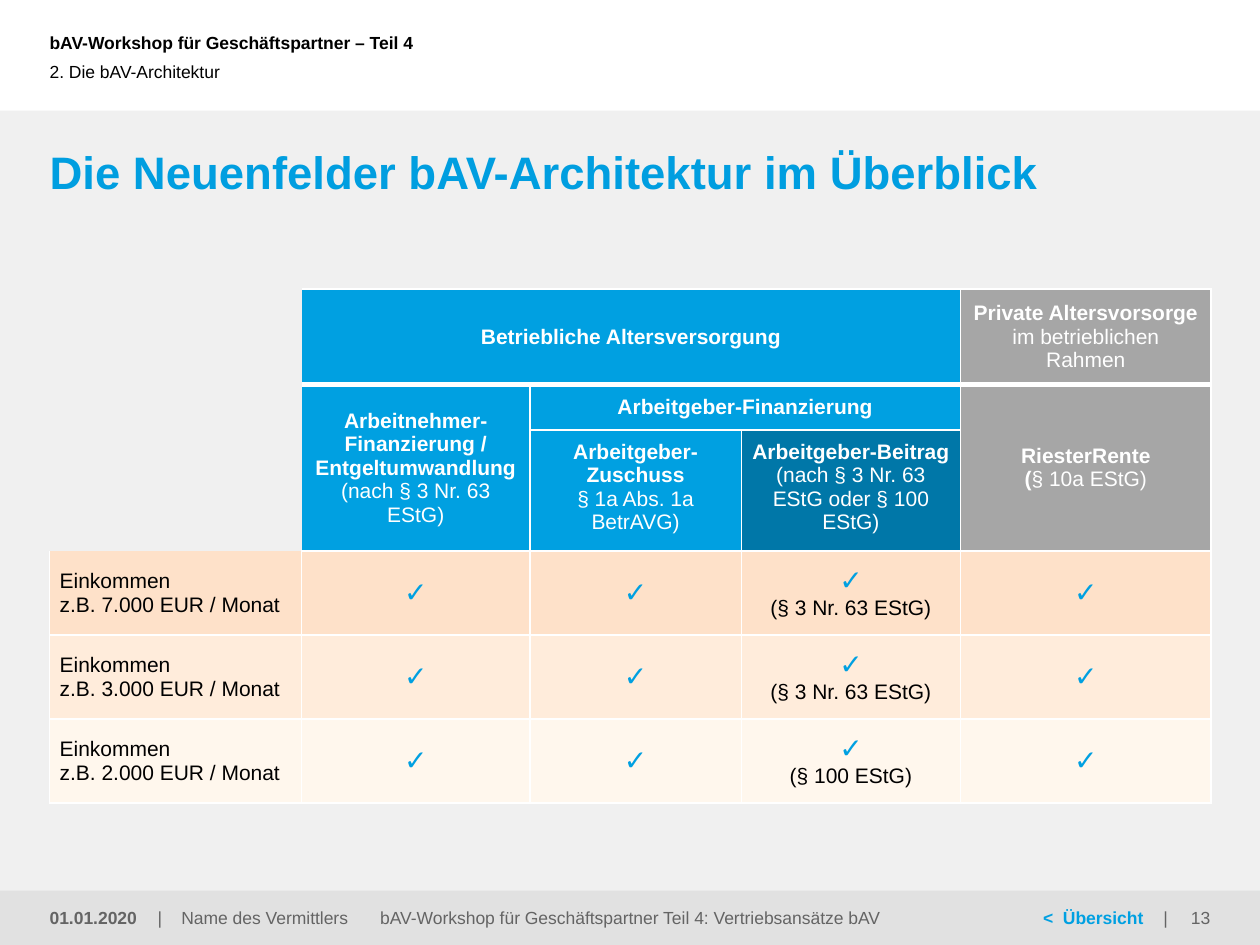
import pptx
import pptx.util
import pptx.dml.color
import pptx.enum.shapes
import pptx.enum.text
import pptx.oxml
import pptx.oxml.ns
from lxml import etree

Pt = pptx.util.Pt
ALIGN = pptx.enum.text.PP_ALIGN
ANCHOR = pptx.enum.text.MSO_ANCHOR
HEX = {
    "white": "FFFFFF", "black": "000000", "page": "F0F0F0", "foot": "E1E1E1",
    "text": "646464", "title": "009EE0", "blue": "00A0E1", "deep": "0077A8",
    "gray": "A6A6A6", "high": "FEE1C9", "mid": "FFECDB", "low": "FFF7ED",
}
LIGHT = {"bold": False}
TICK = ("✓", {"size": 16, "color": "blue", "bold": True})


def paint(fill, color):
    fill.solid()
    fill.fore_color.rgb = pptx.dml.color.RGBColor.from_string(HEX[color])


def child(node, tag, **attrs):
    return etree.SubElement(node, pptx.oxml.ns.qn("a:" + tag), attrs)


def put(host, paras, size=10, color="text", bold=False, align=ALIGN.LEFT,
        anchor=ANCHOR.MIDDLE, inset=(0, 0, 0, 0), tabs=()):
    frame = getattr(host, "text_frame", host)
    frame.word_wrap = True
    host.vertical_anchor = anchor
    host.margin_left, host.margin_top, host.margin_right, host.margin_bottom = map(Pt, inset)
    for i, runs in enumerate(paras):
        para = frame.add_paragraph() if i else frame.paragraphs[0]
        para.alignment = align
        para.space_before = Pt(0)
        if tabs:
            stops = child(para._p.get_or_add_pPr(), "tabLst")
            for stop in tabs:
                child(stops, "tab", pos=str(Pt(stop)), algn="l")
        for part in runs:
            words, extra = (part, {}) if isinstance(part, str) else part
            look = {"size": size, "color": color, "bold": bold, **extra}
            run = para.add_run()
            run.text = words
            run.font.name = "Arial"
            run.font.size = Pt(look["size"])
            run.font.bold = look["bold"]
            paint(run.font.fill, look["color"])


def place(shape, box):
    shape.left, shape.top, shape.width, shape.height = map(Pt, box)


def band(slide, box, color):
    shape = slide.shapes.add_shape(
        pptx.enum.shapes.MSO_SHAPE.RECTANGLE, *map(Pt, box))
    shape.shadow.inherit = False
    shape.line.fill.background()
    paint(shape.fill, color)


def label(slide, box, runs, **look):
    shape = slide.shapes.add_textbox(*map(Pt, box))
    put(shape.text_frame, [runs], **look)


def head(slide, box):
    x, y, w, h = box
    label(slide, (x, y, 502.6, 48.2),
          ["bAV-Workshop für Geschäftspartner – Teil 4"],
          color="black", bold=True, inset=(28.35, 3.6, 7.2, 3.6))
    title, body = slide.placeholders
    for shape, spot in ((title, (x + 28.35, y + 82, 663.8, 39.6)),
                        (body, (x, y + 18, 514.8, h - 18))):
        slide.shapes._spTree.append(shape._element)
        place(shape, spot)
        shape.text_frame.auto_size = pptx.enum.text.MSO_AUTO_SIZE.NONE
    put(title.text_frame, [["Die Neuenfelder bAV-Architektur im Überblick"]],
        size=26, color="title", bold=True, anchor=ANCHOR.TOP)
    props = body.text_frame.paragraphs[0]._p.get_or_add_pPr()
    props.set("marL", "0")
    props.set("indent", "0")
    child(props, "buNone")
    put(body.text_frame, [["2. Die bAV-Architektur"]], color="black",
        inset=(28.35, 0, 0, 0))


def foot(slide, box):
    x, y, w, h = box
    band(slide, box, "foot")
    label(slide, (x, y, 87.8, h), ["01.01.2020"], bold=True,
          inset=(28.35, 3.6, 7.2, 3.6))
    label(slide, (x + 90, y, 174.2, h), ["|\tName des Vermittlers"], tabs=[13.6])
    label(slide, (x + 205.2, y, 309.6, h),
          ["bAV-Workshop für Geschäftspartner Teil 4: Vertriebsansätze bAV"],
          align=ALIGN.CENTER)
    label(slide, (x + 495.4, y, 174.2, h),
          [("<\tÜbersicht", {"color": "blue", "bold": True}), "\t|"],
          tabs=[11.4, 68.8], inset=(100.6, 0, 0, 0))
    label(slide, (x + w - 67.7, y, 67.7, h), ["13"], align=ALIGN.RIGHT,
          inset=(7.2, 3.6, 28.35, 3.6))


def edge(cell, widths):
    props = cell._tc.get_or_add_tcPr()
    for i, (side, width) in enumerate(zip("LRTB", widths)):
        line = child(props, "ln" + side, w=str(Pt(width)))
        if width:
            child(child(line, "solidFill"), "srgbClr", val=HEX["white"])
        else:
            child(line, "noFill")
        props.insert(i, line)


def grid(slide, box):
    cols = [144, 130.5, 120.8, 125.3, 143.2]
    rows = [51.5, 24.5, 65.2, 48, 48, 48]
    frame = slide.shapes.add_table(len(rows), len(cols), *map(Pt, box))
    table = frame.table
    table.first_row = table.horz_banding = False
    for col, width in zip(table.columns, cols):
        col.width = Pt(width)
    for row, height in zip(table.rows, rows):
        row.height = Pt(height)
    for top, left, low, right in ((0, 1, 0, 3), (1, 1, 2, 1), (1, 2, 1, 3), (1, 4, 2, 4)):
        table.cell(top, left).merge(table.cell(low, right))

    heads = {
        (0, 1): ("blue", [["Betriebliche Altersversorgung"]]),
        (0, 4): ("gray", [["Private Altersvorsorge"],
                          [("im betrieblichen Rahmen", LIGHT)]]),
        (1, 1): ("blue", [["Arbeitnehmer-"], ["Finanzierung /"], ["Entgeltumwandlung"],
                          [("(nach § 3 Nr. 63 EStG)", LIGHT)]]),
        (1, 2): ("blue", [["Arbeitgeber-Finanzierung"]]),
        (1, 4): ("gray", [["RiesterRente"], ["(", ("§ 10a EStG)", LIGHT)]]),
        (2, 2): ("blue", [["Arbeitgeber-"], ["Zuschuss"],
                          [("§ 1a Abs. 1a BetrAVG)", LIGHT)]]),
        (2, 3): ("deep", [["Arbeitgeber-Beitrag"],
                          [("(nach § 3 Nr. 63 EStG oder § 100 EStG)", LIGHT)]]),
    }
    pad = (5.76,) * 4
    for (r, c), (color, paras) in heads.items():
        cell = table.cell(r, c)
        paint(cell.fill, color)
        put(cell, paras, size=12, color="white", bold=True, align=ALIGN.CENTER,
            anchor=ANCHOR.TOP if r == 2 else ANCHOR.MIDDLE, inset=pad)

    levels = [("7.000", "§ 3 Nr. 63 EStG", "high"),
              ("3.000", "§ 3 Nr. 63 EStG", "mid"),
              ("2.000", "§ 100 EStG", "low")]
    for r, (pay, law, color) in enumerate(levels, 3):
        line = [[["Einkommen"], [f"z.B. {pay} EUR / Monat"]],
                [[TICK]], [[TICK]], [[TICK], [f"({law})"]], [[TICK]]]
        for c, paras in enumerate(line):
            cell = table.cell(r, c)
            paint(cell.fill, color)
            put(cell, paras, size=12, color="black", inset=pad,
                align=ALIGN.CENTER if c else ALIGN.LEFT)

    for r in range(len(rows)):
        for c in range(len(cols)):
            cell = table.cell(r, c)
            if not cell.text_frame.text:
                cell.fill.background()
                put(cell, [])
                child(cell.text_frame.paragraphs[0]._p, "endParaRPr", sz="1200")
            if r < 3 and c == 0:
                edge(cell, (0, 0, 0, 0))
            else:
                edge(cell, (0 if r < 3 and c == 1 else 1, 1,
                            0 if (r, c) == (3, 0) else 3 if r == 1 else 1,
                            3 if r == 0 else 1))


def main():
    deck = pptx.Presentation()
    deck.slide_width, deck.slide_height = Pt(720), Pt(540)
    slide = deck.slides.add_slide(deck.slide_layouts[1])
    band(slide, (0, 63.2, 720, 476.8), "page")
    head(slide, (0, 0, 720, 63.2))
    foot(slide, (0, 509, 720, 31))
    grid(slide, (28.35, 165, 663.8, 285.2))
    deck.save("out.pptx")


if __name__ == "__main__":
    main()
